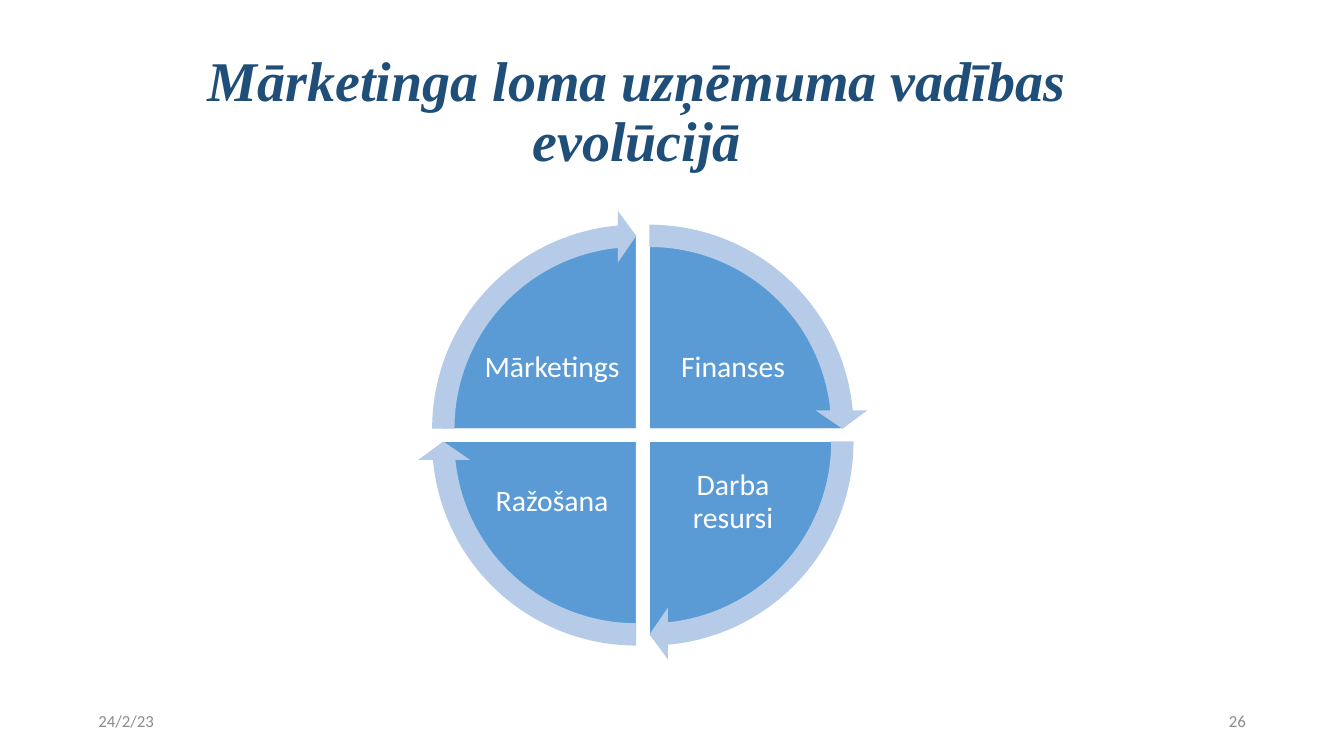
from typing import NamedTuple

from pptx import Presentation
from pptx.dml.color import RGBColor
from pptx.enum.shapes import MSO_SHAPE as Kind
from pptx.enum.text import MSO_ANCHOR as Anchor, MSO_AUTO_SIZE as Fit, PP_ALIGN as Align
from pptx.util import Cm, Pt

NAVY = RGBColor(0x1F, 0x4E, 0x79)
BLUE = RGBColor(0x5B, 0x9B, 0xD5)
PALE = RGBColor(0xB5, 0xCB, 0xE7)
GRAY = RGBColor(0x8C, 0x8C, 0x8C)
WHITE = RGBColor(0xFF, 0xFF, 0xFF)

# Lengths in cm; angles in adjustment units, 54 to a quarter turn
PIE = 16.18
RIM = 1.0
QUARTER, TURN = 54, 216
SWEEP = 50.725
LEFTS, TOPS = (18.35, 18.9), (9.73, 10.26)
TEXT_LEFTS, TEXT_TOPS = (19.96, 27.48), (13.08, 18.67)
TEXT_SIZE = (5.97, 4.42)


class Sector(NamedTuple):
    name: str
    col: int
    row: int
    start: int


class Label(NamedTuple):
    text: str
    box: tuple[float, float, float, float]
    size: float
    color: RGBColor
    align: Align
    inset: float = 0.25
    lead: float = 1.0


SECTORS = [
    Sector("Finanses", 1, 0, 3 * QUARTER),
    Sector("Darba resursi", 1, 1, 0),
    Sector("Ražošana", 0, 1, QUARTER),
    Sector("Mārketings", 0, 0, 2 * QUARTER),
]
FOOTER = [
    Label("24/2/23", (3.84, 29.11, 12.57, 1.68), 19.8, GRAY, Align.LEFT),
    Label("26", (39.45, 29.11, 12.57, 1.68), 19.8, GRAY, Align.RIGHT),
]


def add_label(slide, label: Label) -> None:
    frame = slide.shapes.add_textbox(*map(Cm, label.box)).text_frame
    frame.word_wrap = True
    frame.vertical_anchor = Anchor.MIDDLE
    frame.margin_left = frame.margin_right = Cm(label.inset)
    frame.margin_top = frame.margin_bottom = Cm(0.13)
    para = frame.paragraphs[0]
    para.text = label.text
    para.alignment = label.align
    para.line_spacing = label.lead
    para.font.name = "Calibri"
    para.font.size = Pt(label.size)
    para.font.color.rgb = label.color


def add_round(slide, kind: Kind, sector: Sector, rim: float,
              fill: RGBColor, angles: list[float]):
    size = Cm(PIE + 2 * rim)
    shape = slide.shapes.add_shape(
        kind, Cm(LEFTS[sector.col] - rim), Cm(TOPS[sector.row] - rim), size, size)
    for i, value in enumerate(angles):
        shape.adjustments[i] = value
    shape.shadow.inherit = False
    shape.fill.solid()
    shape.fill.fore_color.rgb = fill
    shape.line.fill.background()
    return shape


def add_sector(slide, sector: Sector) -> None:
    end = (sector.start + QUARTER) % TURN
    pie = add_round(slide, Kind.PIE, sector, 0, BLUE, [sector.start, end])
    pie.line.color.rgb = WHITE
    pie.line.width = Pt(1)
    box = (TEXT_LEFTS[sector.col], TEXT_TOPS[sector.row], *TEXT_SIZE)
    add_label(slide, Label(sector.name, box, 35, WHITE, Align.CENTER, 0.13, 0.9))


def add_arrow(slide, sector: Sector) -> None:
    angles = [0.051, 3.275, sector.start + SWEEP, sector.start, 0.059]
    add_round(slide, Kind.CIRCULAR_ARROW, sector, RIM, PALE, angles)


def set_title(slide, text: str) -> None:
    title = slide.shapes.title
    title.left, title.top, title.width, title.height = map(
        Cm, (3.84, 1.68, 45.24, 6.07))
    frame = title.text_frame
    frame.auto_size = Fit.NONE
    frame.word_wrap = True
    frame.vertical_anchor = Anchor.MIDDLE
    frame.margin_left = frame.margin_right = Cm(0.5)
    para = frame.paragraphs[0]
    para.text = text
    para.alignment = Align.CENTER
    para.line_spacing = 0.9
    font = para.font
    font.name, font.size = "Times New Roman", Pt(66)
    font.bold = font.italic = True
    font.color.rgb = NAVY


def main() -> None:
    deck = Presentation()
    deck.slide_width, deck.slide_height = Cm(55.85), Cm(31.42)
    slide = deck.slides.add_slide(deck.slide_layouts[5])

    # Title and footer
    set_title(slide, "Mārketinga loma uzņēmuma vadības evolūcijā")
    for label in FOOTER:
        add_label(slide, label)

    # Cycle: sectors below, arrows on top
    for sector in SECTORS:
        add_sector(slide, sector)
    for sector in SECTORS:
        add_arrow(slide, sector)

    deck.save("out.pptx")


if __name__ == "__main__":
    main()
